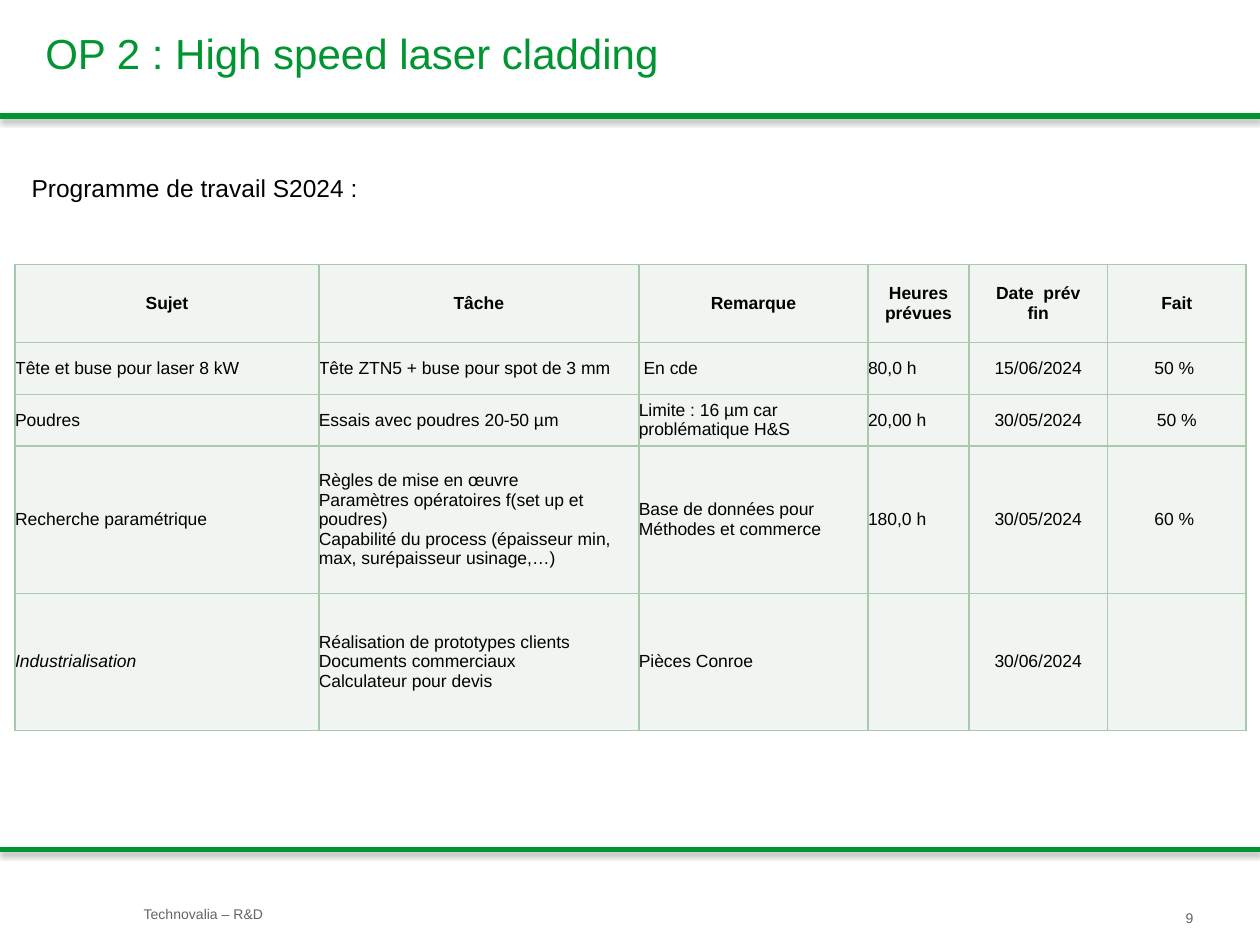
"""Build the work programme slide for high speed laser cladding."""
from dataclasses import dataclass
from typing import Any

from lxml.etree import SubElement
from pptx import Presentation
from pptx.dml.color import RGBColor
from pptx.enum.shapes import MSO_CONNECTOR
from pptx.enum.text import MSO_ANCHOR, MSO_AUTO_SIZE, PP_ALIGN
from pptx.oxml.ns import qn
from pptx.util import Inches, Pt

GREEN = RGBColor(0x00, 0x95, 0x30)
GREY = RGBColor(0x62, 0x64, 0x69)
BLACK = RGBColor(0x00, 0x00, 0x00)
CELL_FILL = RGBColor(0xF1, 0xF5, 0xF1)
BORDER = RGBColor(0xAA, 0xC8, 0xAD)

COLUMN_WIDTHS = (24.1, 25.4, 18.2, 8, 11, 11)
ROW_HEIGHTS = (6.2, 4.1, 4.1, 11.7, 10.9)
CENTRED_COLUMNS = (4, 5)
PROGRAMME = (
    ("Sujet", "Tâche", "Remarque", "Heures prévues", "Date  prév\vfin", "Fait"),
    ("Tête et buse pour laser 8 kW", "Tête ZTN5 + buse pour spot de 3 mm",
     " En cde", "80,0 h", "15/06/2024", "50 % "),
    ("Poudres", "Essais avec poudres 20-50 µm",
     "Limite : 16 µm car problématique H&S", "20,00 h", "30/05/2024", "50 %"),
    ("Recherche paramétrique",
     "Règles de mise en œuvre\n"
     "Paramètres opératoires f(set up et poudres)\n"
     "Capabilité du process (épaisseur min, max, surépaisseur usinage,…)",
     "Base de données pour Méthodes et commerce ", "180,0 h", "30/05/2024", "60 % "),
    ("Industrialisation",
     "Réalisation de prototypes clients\nDocuments commerciaux\nCalculateur pour devis",
     "Pièces Conroe ", "", "30/06/2024", ""),
)


@dataclass
class SlideBuilder:
    """Hold the style and the current slide, on a grid of 100 columns by 75 rows."""
    deck: Any
    page: Any
    font_name: str = "Arial"

    def across(self, columns):
        return int(self.deck.slide_width * columns / 100)

    def down(self, rows):
        return int(self.deck.slide_height * rows / 75)

    def area(self, left, top, width, height):
        return self.across(left), self.down(top), self.across(width), self.down(height)

    def style(self, para, size, color, align=PP_ALIGN.LEFT, bold=False, italic=False):
        para.alignment = align
        font = para.font
        font.name, font.size, font.bold, font.italic = self.font_name, Pt(size), bold, italic
        font.color.rgb = color

    def fit(self, frame, wrap=True, anchor=MSO_ANCHOR.TOP, margin=0):
        frame.auto_size, frame.word_wrap = MSO_AUTO_SIZE.NONE, wrap
        frame.vertical_anchor = anchor
        frame.margin_left = frame.margin_right = 0
        frame.margin_top = frame.margin_bottom = Inches(margin)

    def placeholder(self, index, text, area, size, color, anchor=MSO_ANCHOR.TOP):
        box = self.page.placeholders[index]
        box.left, box.top, box.width, box.height = self.area(*area)
        box.text_frame.text = text
        self.fit(box.text_frame, anchor=anchor, margin=0.01)
        para = box.text_frame.paragraphs[0]
        para.space_before = Pt(0)
        properties = para._p.get_or_add_pPr()
        properties.set("marL", "0")
        properties.set("indent", "0")
        SubElement(properties, qn("a:buNone"))
        self.style(para, size, color)

    def label(self, text, area, size, color, wrap=True):
        box = self.page.shapes.add_textbox(*self.area(*area))
        box.text_frame.text = text
        self.fit(box.text_frame, wrap)
        self.style(box.text_frame.paragraphs[0], size, color)

    def rule(self, row):
        line = self.page.shapes.add_connector(
            MSO_CONNECTOR.STRAIGHT, 0, self.down(row), self.across(100), self.down(row))
        line.line.color.rgb = GREEN
        line.line.width = Pt(3)
        effects = SubElement(line._element.spPr, qn("a:effectLst"))
        shadow = SubElement(effects, qn("a:outerShdw"), blurRad=str(Pt(3.1)),
                            dist=str(Pt(1.8)), dir="5400000", rotWithShape="0")
        color = SubElement(shadow, qn("a:srgbClr"), val=str(BLACK))
        SubElement(color, qn("a:alpha"), val="35000")

    def cell_frame(self, cell):
        properties = cell._tc.get_or_add_tcPr()
        for side in ("lnL", "lnR", "lnT", "lnB"):
            edge = SubElement(properties, qn(f"a:{side}"), w=str(Pt(1)))
            fill = SubElement(edge, qn("a:solidFill"))
            SubElement(fill, qn("a:srgbClr"), val=str(BORDER))
        cell.fill.solid()
        cell.fill.fore_color.rgb = CELL_FILL
        cell.vertical_anchor = MSO_ANCHOR.MIDDLE
        cell.margin_left = cell.margin_right = cell.margin_top = cell.margin_bottom = 0

    def table(self, left, top, records, widths, heights):
        table = self.page.shapes.add_table(
            len(heights), len(widths),
            *self.area(left, top, sum(widths), sum(heights))).table
        table.first_row = table.horz_banding = False
        for column, width in zip(table.columns, widths):
            column.width = self.across(width)
        for row, height in zip(table.rows, heights):
            row.height = self.down(height)
        for r, record in enumerate(records):
            for c, text in enumerate(record):
                cell = table.cell(r, c)
                self.cell_frame(cell)
                cell.text_frame.text = text
                centred = r == 0 or c in CENTRED_COLUMNS
                for para in cell.text_frame.paragraphs:
                    self.style(para, 10, BLACK,
                               PP_ALIGN.CENTER if centred else PP_ALIGN.LEFT,
                               bold=r == 0, italic=text == "Industrialisation")


def main():
    deck = Presentation()
    deck.slide_width, deck.slide_height = Inches(10), Inches(7.5)
    builder = SlideBuilder(deck, deck.slides.add_slide(deck.slide_layouts[1]))
    builder.placeholder(0, "OP 2 : High speed laser cladding", (3.6, 0, 72, 8.3),
                        24, GREEN, MSO_ANCHOR.MIDDLE)
    builder.placeholder(1, "Programme de travail S2024 :", (2.5, 13.6, 70.8, 4.7), 14, BLACK)
    for row in (9.2, 67.4):
        builder.rule(row)
    builder.label("Technovalia – R&D", (11.4, 71.9, 10.5, 1.3), 8, GREY, wrap=False)
    builder.label("9", (94.1, 72.2, 3.2, 0.8), 8, GREY)
    builder.table(1.2, 21, PROGRAMME, COLUMN_WIDTHS, ROW_HEIGHTS)
    deck.save("out.pptx")


if __name__ == "__main__":
    main()
